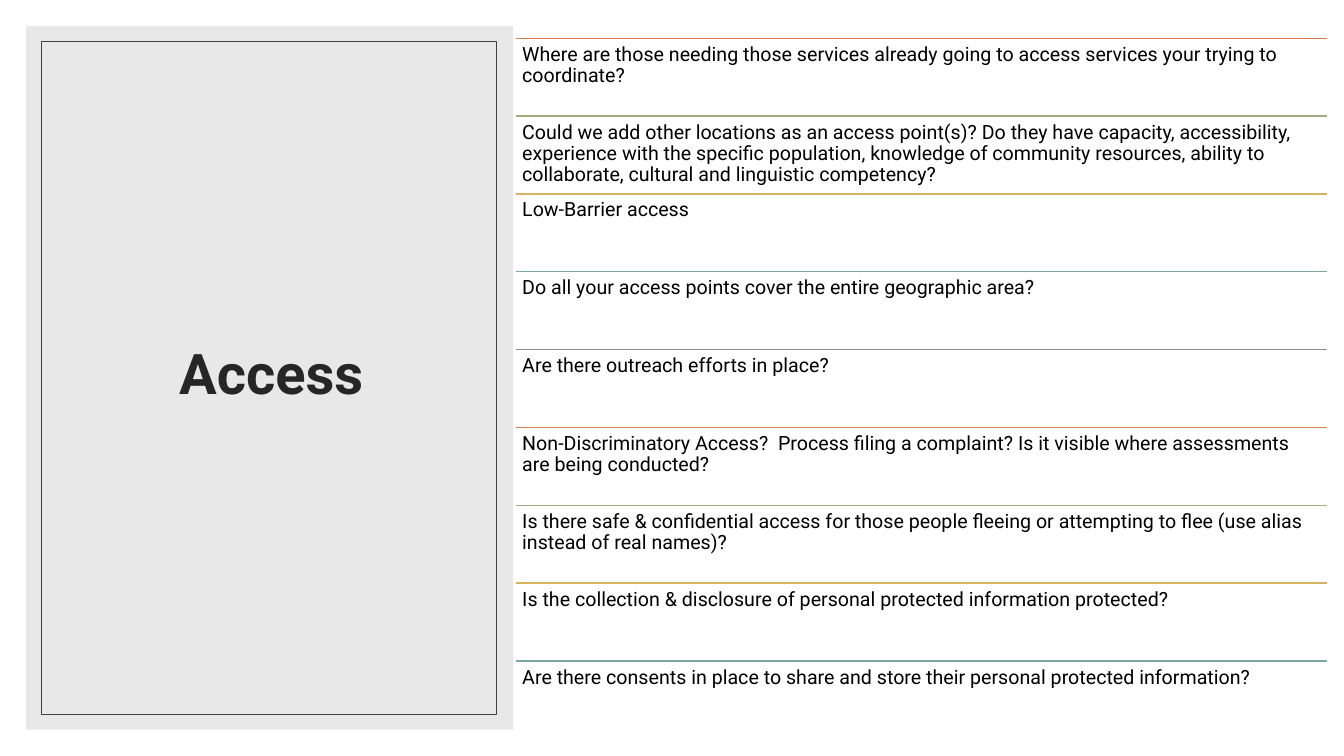
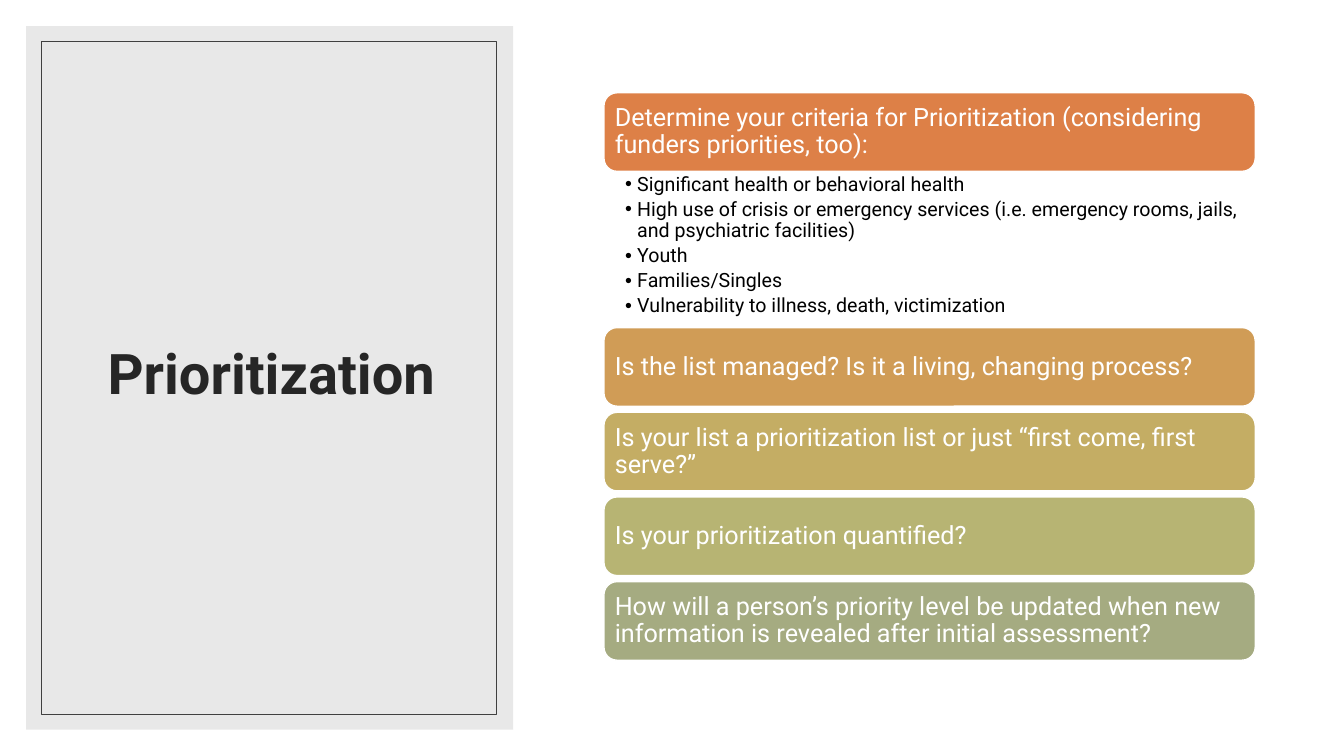
import pptx
import pptx.dml.color
import pptx.enum.shapes
import pptx.enum.text
import pptx.oxml
import pptx.oxml.ns
import pptx.util
from dataclasses import dataclass
from itertools import cycle

Inches = pptx.util.Inches
Pt = pptx.util.Pt
MSO_SHAPE = pptx.enum.shapes.MSO_SHAPE
ANCHOR = pptx.enum.text.MSO_ANCHOR
ALIGN = pptx.enum.text.PP_ALIGN

ACCESS_QUESTIONS = [
    "Where are those needing those services already going to access services your trying to coordinate?",
    "Could we add other locations as an access point(s)? Do they have capacity, accessibility, "
    "experience with the specific population, knowledge of community resources, ability to "
    "collaborate, cultural and linguistic competency?",
    "Low-Barrier access",
    "Do all your access points cover the entire geographic area?",
    "Are there outreach efforts in place?",
    "Non-Discriminatory Access?  Process filing a complaint? Is it visible where assessments are "
    "being conducted?",
    "Is there safe & confidential access for those people fleeing or attempting to flee (use alias "
    "instead of real names)?",
    "Is the collection & disclosure of personal protected information protected?",
    "Are there consents in place to share and store their personal protected information?",
]
PRIORITY_CARDS = [
    "Determine your criteria for Prioritization (considering funders priorities, too):",
    "Is the list managed? Is it a living, changing process?",
    "Is your list a prioritization list or just “first come, first serve?”",
    "Is your prioritization quantified?",
    "How will a person’s priority level be updated when new information is revealed after initial "
    "assessment?",
]
CRITERIA = [
    "Significant health or behavioral health",
    "High use of crisis or emergency services (i.e. emergency rooms, jails, and psychiatric facilities)",
    "Youth",
    "Families/Singles",
    "Vulnerability to illness, death, victimization",
]


@dataclass(frozen=True)
class Theme:
    font: str = "Roboto"
    title_size: int = 40
    card_size: int = 18
    text_size: int = 14
    title: str = "262626"
    text: str = "000000"
    white: str = "FFFFFF"
    panel: str = "D9D9D9"
    panel_opacity: int = 60
    frame: str = "404040"
    rules: tuple = ("DD8047", "A5AB81", "D8B25C", "7BA79D", "968C8C")
    cards: tuple = ("DD8047", "D09C56", "C4AD64", "B7B473", "A5AB81")


THEME = Theme()


def rgb(value):
    return pptx.dml.color.RGBColor.from_string(value)


def place(shape, left, top, width, height):
    shape.left, shape.top = Inches(left), Inches(top)
    shape.width, shape.height = Inches(width), Inches(height)


def write(shape, lines, size, color, insets, anchor=ANCHOR.TOP, align=ALIGN.LEFT, bold=False):
    """Fill a shape with one paragraph per line; insets are left, top, right, bottom."""
    frame = shape.text_frame
    frame.text = "\n".join(lines)
    frame.word_wrap = True
    frame.auto_size = pptx.enum.text.MSO_AUTO_SIZE.NONE
    frame.vertical_anchor = anchor
    frame.margin_left, frame.margin_top, frame.margin_right, frame.margin_bottom = map(Inches, insets)
    for paragraph in frame.paragraphs:
        paragraph.alignment = align
        paragraph.line_spacing = 0.9
        paragraph.space_before = Pt(0)
        paragraph.font.name = THEME.font
        paragraph.font.size = Pt(size)
        paragraph.font.bold = bold
        paragraph.font.color.rgb = rgb(color)


def add_box(slide, kind, box, fill=None, line=None, line_width=1):
    shape = slide.shapes.add_shape(kind, *map(Inches, box))
    shape.shadow.inherit = False
    if fill:
        shape.fill.solid()
        shape.fill.fore_color.rgb = rgb(fill)
    else:
        shape.fill.background()
    if line:
        shape.line.color.rgb = rgb(line)
        shape.line.width = Pt(line_width)
    else:
        shape.line.fill.background()
    return shape


def add_rule(slide, left, top, width, color):
    rule = slide.shapes.add_connector(
        pptx.enum.shapes.MSO_CONNECTOR.STRAIGHT,
        Inches(left), Inches(top), Inches(left + width), Inches(top))
    rule.line.color.rgb = rgb(color)
    rule.line.width = Pt(1)
    pptx.oxml.ns.qn("a:effectLst")
    rule.line._get_or_add_ln().addnext(
        pptx.oxml.parse_xml(f"<a:effectLst {pptx.oxml.ns.nsdecls('a')}/>"))


def add_titled_slide(presentation, layout_index, title):
    """Add a slide with the framed grey panel behind its title."""
    slide = presentation.slides.add_slide(presentation.slide_layouts[layout_index])
    panel = add_box(slide, MSO_SHAPE.RECTANGLE, (0.26, 0.26, 4.83, 6.98), fill=THEME.panel)
    color = panel.fill._xPr.find(".//" + pptx.oxml.ns.qn("a:srgbClr"))
    color.append(pptx.oxml.parse_xml(
        f"<a:alpha {pptx.oxml.ns.nsdecls('a')} val='{THEME.panel_opacity * 1000}'/>"))
    slide.shapes.title._element.addprevious(panel._element)
    place(slide.shapes.title, 0.63, 0.61, 4.12, 6.24)
    write(slide.shapes.title, [title], THEME.title_size, THEME.title, (0.1, 0.05, 0.1, 0.05),
          ANCHOR.MIDDLE, ALIGN.CENTER, bold=True)
    add_box(slide, MSO_SHAPE.RECTANGLE, (0.41, 0.41, 4.51, 6.68), line=THEME.frame, line_width=0.5)
    return slide


def build_access(presentation):
    slide = add_titled_slide(presentation, 5, "Access")
    left, top, width, height = 5.12, 0.38, 8.04, 6.95
    row_height = height / len(ACCESS_QUESTIONS)
    for row, (question, color) in enumerate(zip(ACCESS_QUESTIONS, cycle(THEME.rules))):
        row_top = top + row * row_height
        add_rule(slide, left, row_top, width, color)
        box = slide.shapes.add_textbox(*map(Inches, (left, row_top, width, row_height)))
        write(box, [question], THEME.text_size, THEME.text, (0.06,) * 4)


def build_prioritization(presentation):
    slide = add_titled_slide(presentation, 1, "Prioritization")
    left, top, width = 5.99, 0.92, 6.46
    card_height, gap, list_height = 0.78, 0.06, 1.55
    for index, (card_text, color) in enumerate(zip(PRIORITY_CARDS, THEME.cards)):
        card = add_box(slide, MSO_SHAPE.ROUNDED_RECTANGLE, (left, top, width, card_height),
                       fill=color, line=THEME.white)
        write(card, [card_text], THEME.card_size, THEME.white, (0.07,) * 4, ANCHOR.MIDDLE)
        top += card_height
        if index == 0:
            criteria = slide.placeholders[1]
            place(criteria, left, top, width, list_height)
            top += list_height
        else:
            top += gap
    write(criteria, CRITERIA, THEME.text_size, THEME.text, (0.21, 0.03, 0.14, 0.03))
    for paragraph in criteria.text_frame.paragraphs:
        paragraph.space_after = Pt(0.2 * THEME.text_size)
        properties = paragraph._p.get_or_add_pPr()
        properties.set("marL", str(Inches(0.12)))
        properties.set("indent", str(-Inches(0.12)))


def main():
    presentation = pptx.Presentation()
    presentation.slide_width, presentation.slide_height = Inches(13.33), Inches(7.5)
    build_access(presentation)
    build_prioritization(presentation)
    presentation.save("out.pptx")


if __name__ == "__main__":
    main()
